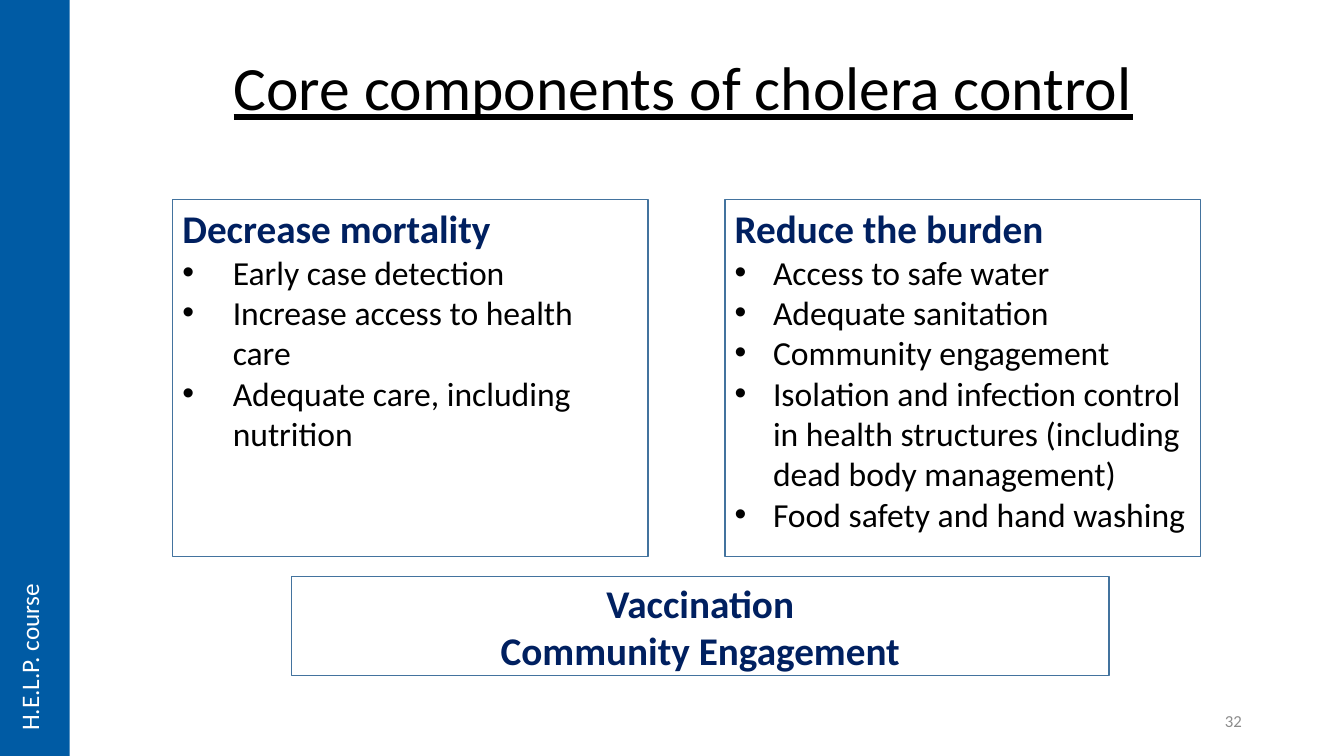
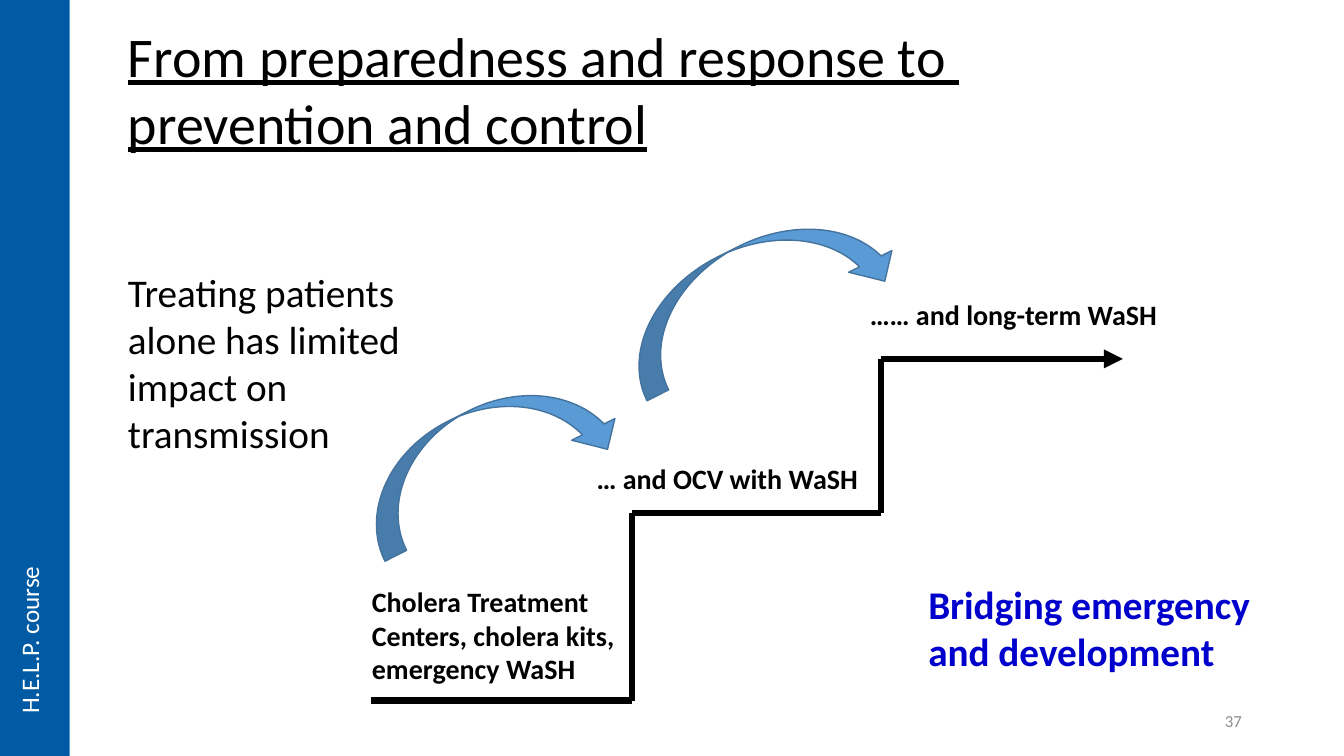
import itertools

import pptx
import pptx.dml.color
import pptx.enum.shapes
import pptx.enum.text
import pptx.oxml.ns
import pptx.util
from lxml import etree

SLIDE_WIDTH = pptx.util.Inches(13.333)
SLIDE_HEIGHT = pptx.util.Inches(7.5)
FONT = "Calibri"
BLACK, WHITE, GREY = "000000", "FFFFFF", "8C8C8C"
NAVY, BRIGHT_BLUE, BAND_BLUE = "002060", "0000CC", "005BA4"
ARROW_BLUE, OUTLINE_BLUE = "5B9BD5", "43739E"

SHAPES = pptx.enum.shapes.MSO_SHAPE
ALIGN = pptx.enum.text.PP_ALIGN
ANCHOR = pptx.enum.text.MSO_ANCHOR


def color(hex_string):
    return pptx.dml.color.RGBColor.from_string(hex_string)


def across(percent):
    """Share of the slide width, in percent."""
    return round(SLIDE_WIDTH * percent / 100)


def down(percent):
    """Share of the slide height, in percent."""
    return round(SLIDE_HEIGHT * percent / 100)


def place(left, top, width, height):
    return across(left), down(top), across(width), down(height)


def add_element(parent, tag, **attributes):
    return etree.SubElement(parent, pptx.oxml.ns.qn(tag), attributes)


def add_bullet(paragraph, indent):
    properties = paragraph._p.get_or_add_pPr()
    hanging = pptx.util.Inches(indent)
    properties.set("marL", str(hanging))
    properties.set("indent", str(-hanging))
    add_element(properties, "a:buFont", typeface="Arial")
    add_element(properties, "a:buChar", char="•")


def write(frame, lines, size, text_color=BLACK, bold=False, underline=False,
          align=ALIGN.LEFT, bullet_indent=None):
    """Fill the frame's empty first paragraph, then add one paragraph per further line."""
    for line in lines:
        paragraph = frame.paragraphs[0] if not frame.text else frame.add_paragraph()
        paragraph.text = line
        paragraph.alignment = align
        if bullet_indent:
            add_bullet(paragraph, bullet_indent)
        font = paragraph.font
        font.name, font.size = FONT, pptx.util.Pt(size)
        font.bold, font.underline = bold, underline
        font.color.rgb = color(text_color)


def add_text(slide, box, lines, size, wrap=True, anchor=ANCHOR.TOP, **style):
    frame = slide.shapes.add_textbox(*place(*box)).text_frame
    frame.word_wrap = wrap
    frame.vertical_anchor = anchor
    write(frame, lines, size, **style)
    return frame


def add_title(slide, box, lines, size):
    add_text(slide, box, lines, size, wrap=False, underline=True)


def add_shape(slide, kind, box, fill, outline=None):
    shape = slide.shapes.add_shape(kind, *place(*box))
    shape.shadow.inherit = False
    shape.fill.solid()
    shape.fill.fore_color.rgb = color(fill)
    if outline:
        shape.line.color.rgb = color(outline)
        shape.line.width = pptx.util.Pt(1)
    else:
        shape.line.fill.background()
    return shape


def add_panel(slide, box, anchor=ANCHOR.TOP):
    """White outlined box; returns its text frame."""
    frame = add_shape(slide, SHAPES.RECTANGLE, box, WHITE, OUTLINE_BLUE).text_frame
    frame.word_wrap = True
    frame.vertical_anchor = anchor
    return frame


def add_component(slide, left, heading, items, indent):
    frame = add_panel(slide, (left, 26.4, 35.4, 47.2))
    write(frame, [heading], 28, NAVY, bold=True)
    write(frame, items, 24, bullet_indent=indent)


def add_stairs(slide, corners):
    """Connect the corners in turn and put an arrowhead on the last line."""
    for start, end in itertools.pairwise(corners):
        connector = slide.shapes.add_connector(
            pptx.enum.shapes.MSO_CONNECTOR.STRAIGHT,
            across(start[0]), down(start[1]), across(end[0]), down(end[1]))
        connector.line.color.rgb = color(BLACK)
        connector.line.width = pptx.util.Pt(4.5)
        if end == corners[-1]:
            add_element(connector.line._get_or_add_ln(), "a:tailEnd", type="triangle")
        add_element(connector._element.spPr, "a:effectLst")


def add_curved_arrow(slide, left, top, width):
    box = (left, top, width, 12.8)
    arrow = add_shape(slide, SHAPES.CURVED_DOWN_ARROW, box, ARROW_BLUE, OUTLINE_BLUE)
    arrow.rotation = 333.3


def add_slide(presentation, number, course_top):
    """Blank slide with the side band, course name and page number."""
    slide = presentation.slides.add_slide(presentation.slide_layouts[6])
    add_shape(slide, SHAPES.RECTANGLE, (0, 0, 5.18, 100), BAND_BLUE)
    course = add_text(slide, (0.68, course_top, 3.75, 21.73), ["H.E.L.P. course"], 18,
                      wrap=False, text_color=WHITE)
    course._txBody.bodyPr.set("vert", "vert270")
    add_text(slide, (70.65, 92.67, 22.5, 5.33), [str(number)], 12,
             anchor=ANCHOR.MIDDLE, text_color=GREY, align=ALIGN.RIGHT)
    return slide


def build_components(presentation):
    slide = add_slide(presentation, 32, 76.27)
    add_title(slide, (16.65, 5.87, 69.08, 11.2), ["Core components of cholera control"], 44)
    add_component(slide, 12.83, "Decrease mortality", [
        "Early case detection",
        "Increase access to health care",
        "Adequate care, including nutrition",
    ], 0.5)
    add_component(slide, 53.93, "Reduce the burden", [
        "Access to safe water",
        "Adequate sanitation",
        "Community engagement",
        "Isolation and infection control in health structures "
        "(including dead body management)",
        "Food safety and hand washing",
    ], 0.38)
    shared = add_panel(slide, (21.68, 76.27, 60.83, 13.07), ANCHOR.MIDDLE)
    write(shared, ["Vaccination", "Community Engagement"], 28, NAVY,
          bold=True, align=ALIGN.CENTER)


def build_staircase(presentation):
    slide = add_slide(presentation, 37, 74)
    add_title(slide, (8.78, 2.13, 63.98, 19.33),
              ["From preparedness and response to ", "prevention and control"], 40)

    floor, landing, summit = 92.67, 67.87, 47.47
    first_riser, second_riser = 47.03, 65.55
    add_stairs(slide, [
        (27.6, floor), (first_riser, floor), (first_riser, landing),
        (second_riser, landing), (second_riser, summit), (83.55, summit),
    ])
    add_curved_arrow(slide, 25.95, 54, 20.33)
    add_curved_arrow(slide, 45.38, 32.27, 21.6)

    step_labels = [
        ((26.93, 76.67, 20.1, 14.8), True,
         "Cholera Treatment Centers, cholera kits, emergency WaSH"),
        ((43.65, 60.4, 21.15, 5.87), False, "… and OCV with WaSH"),
        ((63.98, 38.67, 23.1, 5.87), False, "…… and long-term WaSH"),
    ]
    for box, wrap, label in step_labels:
        add_text(slide, box, [label], 20, wrap=wrap, bold=True)

    add_text(slide, (8.78, 34.8, 23.85, 26.53),
             ["Treating patients alone has limited impact on transmission"], 28)
    add_text(slide, (68.33, 76.13, 27.3, 13.87),
             ["Bridging emergency and development"], 28, text_color=BRIGHT_BLUE, bold=True)


def main():
    presentation = pptx.Presentation()
    presentation.slide_width = SLIDE_WIDTH
    presentation.slide_height = SLIDE_HEIGHT
    build_components(presentation)
    build_staircase(presentation)
    presentation.save("out.pptx")


if __name__ == "__main__":
    main()
